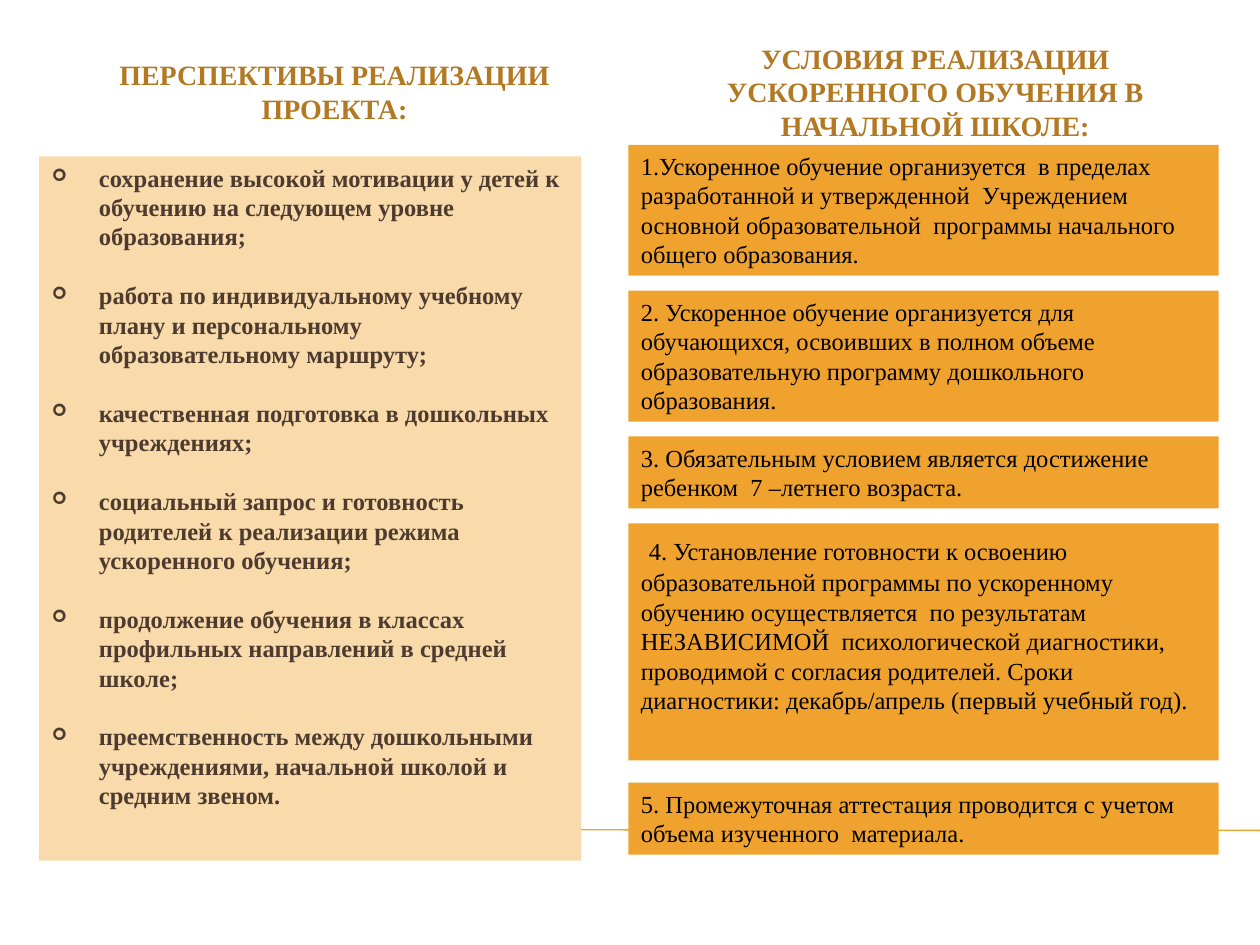
from lxml import etree
from pptx import Presentation
from pptx.dml.color import RGBColor
from pptx.enum.shapes import MSO_CONNECTOR, MSO_SHAPE
from pptx.enum.text import MSO_ANCHOR, MSO_AUTO_SIZE, PP_ALIGN
from pptx.oxml.ns import qn
from pptx.util import Cm, Pt

TOP, MIDDLE = MSO_ANCHOR.TOP, MSO_ANCHOR.MIDDLE
LEFT, CENTER = PP_ALIGN.LEFT, PP_ALIGN.CENTER
RECT, STRAIGHT = MSO_SHAPE.RECTANGLE, MSO_CONNECTOR.STRAIGHT
NO_FIT = MSO_AUTO_SIZE.NONE
FONT = "Times New Roman"
ORANGE, CREAM = "F0A22E", "F9DAAB"
BRONZE, BROWN, BLACK = "B27822", "4E3B30", "000000"

# Content: headings as (placeholder, left in cm, text)
HEADINGS = [
    (1, 0.79, "ПЕРСПЕКТИВЫ РЕАЛИЗАЦИИ ПРОЕКТА:"),
    (3, 12.9, "УСЛОВИЯ РЕАЛИЗАЦИИ УСКОРЕННОГО ОБУЧЕНИЯ В НАЧАЛЬНОЙ ШКОЛЕ:"),
]
PROSPECTS = [
    "сохранение высокой мотивации у детей к обучению на следующем уровне образования;",
    "работа по индивидуальному учебному плану и персональному образовательному маршруту;",
    "качественная подготовка в дошкольных учреждениях;",
    "социальный запрос и готовность родителей к реализации режима ускоренного обучения;",
    "продолжение обучения в классах профильных направлений в средней школе;",
    "преемственность между дошкольными учреждениями, начальной школой и средним звеном.",
]
# Conditions as (height, gap below in cm, lead-in at 18 pt, text)
CONDITIONS = [
    (2.64, 0.3, "", "1.Ускоренное обучение организуется  в пределах  разработанной и утвержденной  "
     "Учреждением основной образовательной  программы начального общего образования."),
    (2.64, 0.3, "", "2. Ускоренное обучение организуется для  обучающихся, освоивших в полном объеме  "
     "образовательную программу дошкольного образования."),
    (1.45, 0.3, "", "3. Обязательным условием является достижение ребенком  7 –летнего возраста."),
    (4.78, 0.45, " ", "4. Установление готовности к освоению  образовательной программы по ускоренному "
     "обучению осуществляется  по результатам НЕЗАВИСИМОЙ  психологической диагностики, проводимой "
     "с согласия родителей. Сроки диагностики: декабрь/апрель (первый учебный год)."),
    (1.45, 0, "", "5. Промежуточная аттестация проводится с учетом объема изученного  материала."),
]


def rgb(color):
    return RGBColor.from_string(color)


def place(sp, left, top, width, height):
    sp.left, sp.top, sp.width, sp.height = Cm(left), Cm(top), Cm(width), Cm(height)


def fill(sp, color):
    sp.fill.solid()
    sp.fill.fore_color.rgb = rgb(color)


def frame(sp, anchor):
    tf = sp.text_frame
    tf.word_wrap = True
    tf.auto_size = NO_FIT
    tf.vertical_anchor = anchor
    return tf


def style(p, size, color, bold=False, align=LEFT):
    p.alignment = align
    f = p.font
    f.name, f.size, f.bold = FONT, Pt(size), bold
    f.color.rgb = rgb(color)


def bullet(p, char, indent, percent):
    pPr = p._p.get_or_add_pPr()
    pPr.set("marL", str(Cm(indent)))
    pPr.set("indent", str(-Cm(indent)))
    marks = [("a:buSzPct", "val", str(percent * 1000)),
             ("a:buFont", "typeface", "Wingdings"),
             ("a:buChar", "char", char)]
    marks = [(etree.Element(qn(tag), {key: value})) for tag, key, value in marks]
    defaults = pPr.find(qn("a:defRPr"))
    for mark in marks:
        defaults.addprevious(mark)


prs = Presentation()
prs.slide_width, prs.slide_height = Cm(25.4), Cm(19.05)
s = prs.slides.add_slide(prs.slide_layouts[4])
ph = {sp.placeholder_format.idx: sp for sp in s.placeholders}
for unused in (0, 4):
    ph[unused]._element.getparent().remove(ph[unused]._element)

# Rule behind everything
rule = s.shapes.add_connector(STRAIGHT, Cm(1.42), Cm(16.72), Cm(25.4), Cm(16.74))
rule.line.color.rgb = rgb(ORANGE)
rule.line.width = Pt(0.75)
etree.SubElement(rule._element.spPr, qn("a:effectLst"))
ph[1]._element.addprevious(rule._element)

# Column headings
for idx, left, text in HEADINGS:
    place(ph[idx], left, 0.74, 11.91, 2.21)
    tf = frame(ph[idx], MIDDLE)
    tf.text = text
    style(tf.paragraphs[0], 16, BRONZE, True, CENTER)

# Prospects list
place(ph[2], 0.79, 3.15, 10.92, 14.2)
fill(ph[2], CREAM)
tf = frame(ph[2], TOP)
for i, text in enumerate(PROSPECTS):
    p = tf.add_paragraph() if i else tf.paragraphs[0]
    p.text = text
    style(p, 14, BROWN, True)
    p.space_before = Pt(16.8 if i else 0)
    bullet(p, "➢", 0.95, 70)

# Stack of conditions
top = 2.92
for height, gap, lead, text in CONDITIONS:
    sp = s.shapes.add_shape(RECT, Cm(12.67), Cm(top), Cm(11.9), Cm(height))
    sp.shadow.inherit = False
    sp.line.fill.background()
    fill(sp, ORANGE)
    p = frame(sp, TOP).paragraphs[0]
    style(p, 14, BLACK)
    if lead:
        r = p.add_run()
        r.text = lead
        r.font.size = Pt(18)
    p.add_run().text = text
    top += height + gap

prs.save("out.pptx")
